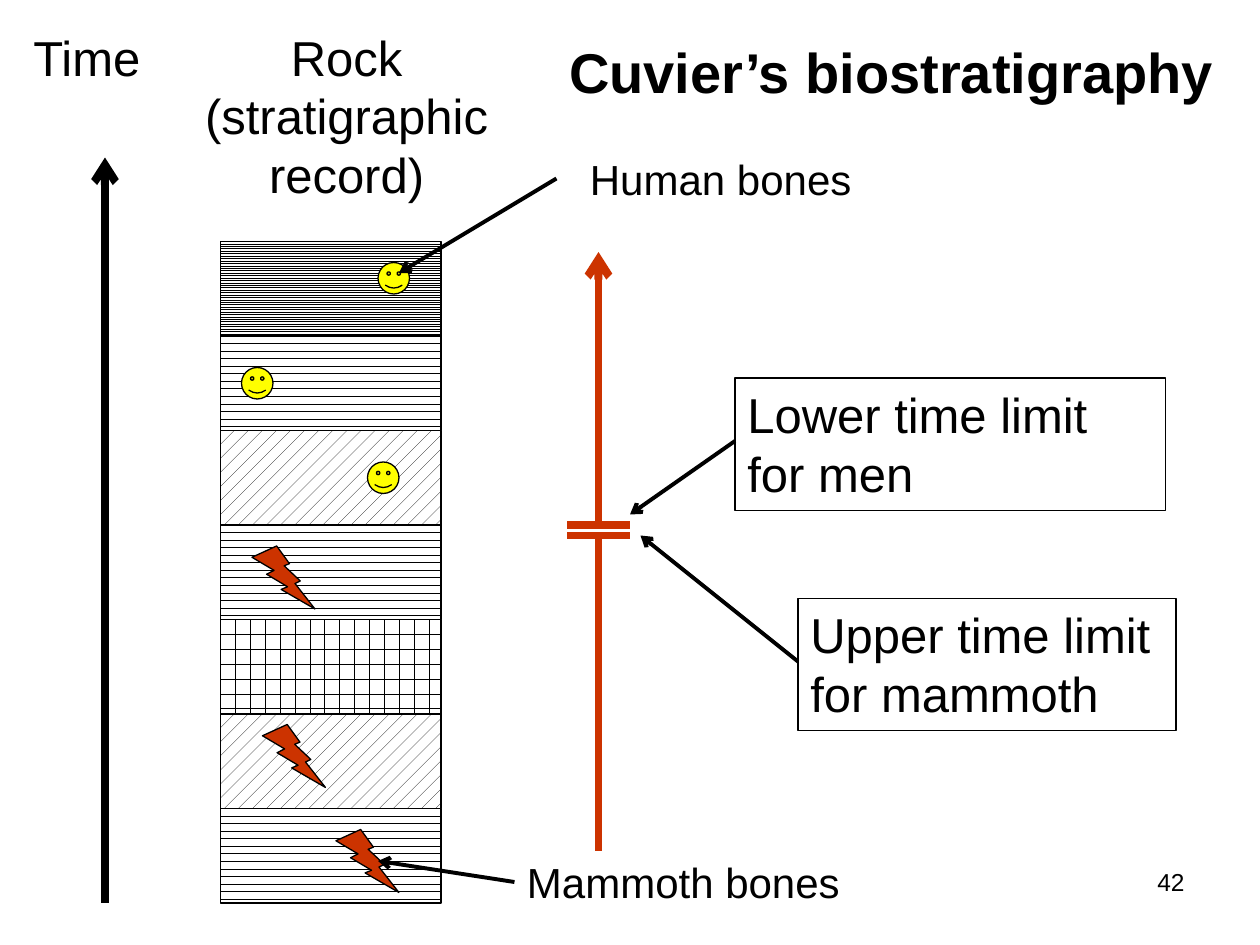
from dataclasses import dataclass
from lxml.etree import SubElement
from pptx import Presentation
from pptx.dml.color import RGBColor
from pptx.enum.dml import MSO_PATTERN as Pattern
from pptx.enum.shapes import MSO_CONNECTOR, MSO_SHAPE as Shape
from pptx.enum.text import MSO_ANCHOR, MSO_AUTO_SIZE, PP_ALIGN as Align
from pptx.oxml.ns import qn
from pptx.util import Inches, Pt


@dataclass(frozen=True)
class Theme:
    font: str = "Arial"
    ink: RGBColor = RGBColor(0, 0, 0)
    paper: RGBColor = RGBColor(255, 255, 255)
    red: RGBColor = RGBColor(0xCC, 0x33, 0x00)
    yellow: RGBColor = RGBColor(255, 255, 0)
    title: int = 32
    heading: int = 28
    label: int = 24
    number: int = 14
    outline: float = 0.75
    pointer: float = 2.25
    axis: float = 4.5


THEME = Theme()
TITLE_ONLY = 5


def grid(cells):
    """Length on a grid of 120 columns by 90 rows, twelve to the inch."""
    return Inches(cells / 12)


def write(shape, text, size=THEME.heading, align=Align.LEFT, bold=False):
    frame = shape.text_frame
    frame.word_wrap = True
    frame.auto_size = MSO_AUTO_SIZE.NONE
    frame.vertical_anchor = MSO_ANCHOR.TOP
    paragraph = frame.paragraphs[0]
    paragraph.text = text
    paragraph.alignment = align
    font = paragraph.font
    font.name, font.size, font.bold = THEME.font, Pt(size), bold
    font.color.rgb = THEME.ink


def add_text(slide, box, text, **text_format):
    write(slide.shapes.add_textbox(*map(grid, box)), text, **text_format)


def add_outlined(slide, kind, box, color=None):
    shape = slide.shapes.add_shape(kind, *map(grid, box))
    shape.shadow.inherit = False
    shape.line.color.rgb = THEME.ink
    shape.line.width = Pt(THEME.outline)
    if color is None:
        shape.fill.background()
    else:
        shape.fill.solid()
        shape.fill.fore_color.rgb = color
    return shape


def add_line(slide, start, end, color=THEME.ink, width=THEME.pointer, arrow=True):
    line = slide.shapes.add_connector(
        MSO_CONNECTOR.STRAIGHT, *map(grid, (*start, *end)))
    line.line.color.rgb = color
    line.line.width = Pt(width)
    if arrow:
        SubElement(line.line._get_or_add_ln(), qn("a:tailEnd"), type="arrow")
    SubElement(line._element.spPr, qn("a:effectLst"))


def add_title(slide, box, text):
    title = slide.shapes.title
    title.left, title.top, title.width, title.height = map(grid, box)
    write(title, text, size=THEME.title, bold=True)


def add_time_axis(slide, box):
    left, top, width, height = box
    add_text(slide, (left, top, width, 6.84), "Time")
    x = left + 8
    add_line(slide, (x, top + height), (x, top + 13), width=THEME.axis)


def add_rock_column(slide, box):
    left, top, width, height = box
    # Layers from youngest to oldest: pattern, fossil, fossil offset
    man = Shape.SMILEY_FACE, 3, THEME.yellow
    mammoth = Shape.LIGHTNING_BOLT, 6, THEME.red
    layers = [
        (Pattern.LIGHT_HORIZONTAL, man, (15, 2)),
        (Pattern.DASHED_HORIZONTAL, man, (2, 3)),
        (Pattern.PERCENT_10, man, (14, 3)),
        (Pattern.DASHED_HORIZONTAL, mammoth, (3, 2)),
        (Pattern.HORIZONTAL_BRICK, None, None),
        (Pattern.PERCENT_10, mammoth, (4, 1)),
        (Pattern.DASHED_HORIZONTAL, mammoth, (11, 2)),
    ]
    depth = height / len(layers)
    for index, (pattern, fossil, offset) in enumerate(layers):
        y = top + index * depth
        fill = add_outlined(slide, Shape.RECTANGLE, (left, y, width, depth)).fill
        fill.patterned()
        fill.pattern = pattern
        fill.fore_color.rgb = THEME.ink
        fill.back_color.rgb = THEME.paper
        if fossil:
            kind, size, color = fossil
            add_outlined(slide, kind,
                         (left + offset[0], y + offset[1], size, size), color)


def add_range_axis(slide, box):
    left, top, width, height = box
    middle, men_limit, mammoth_limit = left + width / 2, top + 26, top + 27
    style = dict(color=THEME.red, width=THEME.axis)
    add_line(slide, (middle, top + height), (middle, mammoth_limit),
             arrow=False, **style)
    for y in (mammoth_limit, men_limit):
        add_line(slide, (left, y), (left + width, y), arrow=False, **style)
    add_line(slide, (middle, men_limit), (middle, top), **style)


def add_limit(slide, box, text, target):
    """Boxed note with an arrow from its left edge to the target."""
    left, top, _, _ = box
    depth = 6
    add_line(slide, (left, top + depth), target)
    write(add_outlined(slide, Shape.RECTANGLE, box), text)


def add_fossil_label(slide, box, text, start, target):
    add_text(slide, box, text, size=THEME.label)
    add_line(slide, start, target)


def main():
    presentation = Presentation()
    presentation.slide_width, presentation.slide_height = grid(120), grid(90)
    slide = presentation.slides.add_slide(
        presentation.slide_layouts[TITLE_ONLY])

    add_title(slide, (53, 3, 65, 7.5), "Cuvier’s biostratigraphy")
    add_time_axis(slide, (2, 2, 15, 84))
    add_text(slide, (16, 2, 34, 18), "Rock (stratigraphic record)",
             align=Align.CENTER)
    add_rock_column(slide, (21, 23, 21, 63))
    add_fossil_label(slide, (55, 14, 42, 6), "Human bones", (53, 17), (38, 26))
    add_fossil_label(slide, (49, 81, 33, 6), "Mammoth bones", (49, 84), (36, 82))
    add_range_axis(slide, (54, 24, 6, 57))
    add_limit(slide, (70, 36, 41, 12.6), "Lower time limit for men", (60, 49))
    add_limit(slide, (76, 57, 36, 12.6), "Upper time limit for mammoth", (61, 51))
    add_text(slide, (86, 82, 28, 6.25), "42", size=THEME.number,
             align=Align.RIGHT)

    presentation.save("out.pptx")


if __name__ == "__main__":
    main()
